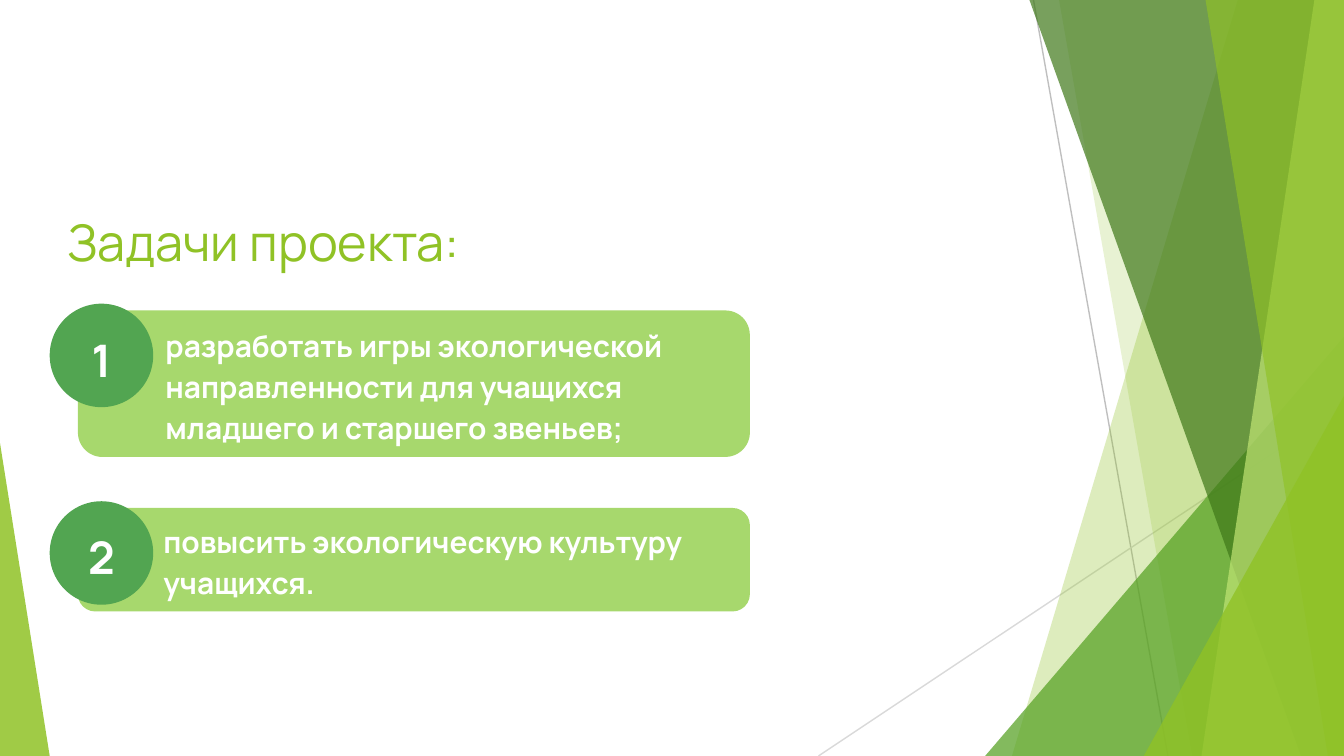
from lxml import etree
from pptx import Presentation
from pptx.dml.color import RGBColor
from pptx.enum.shapes import MSO_CONNECTOR, MSO_SHAPE
from pptx.enum.text import MSO_ANCHOR, MSO_AUTO_SIZE, PP_ALIGN
from pptx.oxml.ns import qn
from pptx.util import Inches, Pt

WIDTH = 10
HEIGHT = WIDTH * 9 / 16
FONT = "Manrope"
WHITE = RGBColor(0xFF, 0xFF, 0xFF)
LIME = RGBColor(0x90, 0xC2, 0x26)
PALE_LIME = RGBColor(0xC0, 0xE4, 0x74)
GREEN = RGBColor(0x54, 0xA0, 0x21)
DARK_GREEN = RGBColor(0x3F, 0x78, 0x19)
CARD_GREEN = RGBColor(0xA7, 0xD8, 0x6D)
BADGE_GREEN = RGBColor(0x52, 0xA5, 0x51)
GRAY = RGBColor(0xBF, 0xBF, 0xBF)
LIGHT_GRAY = RGBColor(0xD9, 0xD9, 0xD9)

TASKS = [
    ("разработать игры экологической направленности для учащихся "
     "младшего и старшего звеньев;", 2.26, 1.09),
    ("повысить экологическую культуру учащихся.", 3.73, 0.77),
]


def paint(shape, color, opacity=100):
    """Give a shape a plain fill with no outline or shadow."""
    shape.shadow.inherit = False
    shape.line.fill.background()
    shape.fill.solid()
    shape.fill.fore_color.rgb = color
    if opacity < 100:
        tint = shape.fill._xPr.find(".//" + qn("a:srgbClr"))
        etree.SubElement(tint, qn("a:alpha"), val=str(opacity * 1000))


def write(shape, text, size, color=WHITE, bold=False, align=PP_ALIGN.LEFT,
          anchor=MSO_ANCHOR.MIDDLE, inset=0.1, indent=0, spacing=None):
    """Write one formatted paragraph into a shape."""
    frame = shape.text_frame
    frame.word_wrap = True
    frame.auto_size = MSO_AUTO_SIZE.NONE
    frame.vertical_anchor = anchor
    frame.margin_left = frame.margin_right = Inches(inset)
    frame.margin_top = frame.margin_bottom = Inches(inset)
    paragraph = frame.paragraphs[0]
    paragraph.alignment = align
    paragraph.line_spacing = spacing
    properties = paragraph._p.get_or_add_pPr()
    properties.set("marL", str(Inches(indent)))
    properties.set("indent", "0")
    run = paragraph.add_run()
    run.text = text
    run.font.name = FONT
    run.font.size = Pt(size)
    run.font.bold = bold
    run.font.color.rgb = color


def add_block(slide, kind, left, top, width, height, color, opacity=100, adjust=None):
    """Add a painted preset shape."""
    block = slide.shapes.add_shape(
        kind, Inches(left), Inches(top), Inches(width), Inches(height))
    if adjust is not None:
        block.adjustments[0] = adjust
    paint(block, color, opacity)
    return block


def add_ray(slide, start, end, color):
    """Add a thin straight line between two points."""
    ray = slide.shapes.add_connector(
        MSO_CONNECTOR.STRAIGHT, *(Inches(value) for value in (*start, *end)))
    ray.line.color.rgb = color
    ray.line.width = Pt(0.75)
    etree.SubElement(ray._element.spPr, qn("a:effectLst"))


def add_band(slide, top_x, bottom_x, color, opacity):
    """Add a full-height band from a slanted edge to the right slide edge."""
    corners = [(Inches(x), Inches(y)) for x, y in (
        (top_x, 0), (WIDTH, 0), (WIDTH, HEIGHT), (bottom_x, HEIGHT))]
    builder = slide.shapes.build_freeform(*corners[0])
    builder.add_line_segments(corners[1:], close=True)
    paint(builder.convert_to_shape(), color, opacity)


def add_corner(slide, left, width, height, color, opacity, apex):
    """Add a right triangle standing on the bottom slide edge."""
    add_block(slide, MSO_SHAPE.ISOSCELES_TRIANGLE, left, HEIGHT - height,
              width, height, color, opacity, apex)


def add_facets(slide):
    """Draw the translucent green facets on both slide edges."""
    add_ray(slide, (7.69, 0), (8.69, HEIGHT), GRAY)
    add_ray(slide, (WIDTH, 3.02), (6.09, HEIGHT), LIGHT_GRAY)
    add_band(slide, 9.21, 7.53, LIME, 30)
    add_band(slide, 7.88, 8.87, LIME, 20)
    add_corner(slide, 7.33, 2.67, 3.12, GREEN, 72, apex=1)
    add_band(slide, 7.66, 9.68, DARK_GREEN, 70)
    add_band(slide, 9.78, 8.94, PALE_LIME, 70)
    add_band(slide, 8.97, 9.88, LIME, 65)
    add_corner(slide, 8.51, 1.49, 2.68, LIME, 80, apex=1)
    add_corner(slide, 0, 0.37, 2.33, LIME, 85, apex=0)


def add_heading(slide, text, left, top, width, height):
    """Place the slide title."""
    heading = slide.shapes.title
    heading.left, heading.top = Inches(left), Inches(top)
    heading.width, heading.height = Inches(width), Inches(height)
    write(heading, text, 27, LIME, anchor=MSO_ANCHOR.BOTTOM, inset=0)


def add_task(slide, number, text, left, top, height):
    """Place a task card with its number badge at the upper left."""
    card = add_block(slide, MSO_SHAPE.ROUNDED_RECTANGLE, left + 0.21, top + 0.05,
                     5, height, CARD_GREEN, adjust=0.167)
    write(card, text, 16, bold=True, indent=0.5, spacing=1.15)
    badge = add_block(slide, MSO_SHAPE.OVAL, left, top, 0.77, 0.77, BADGE_GREEN)
    write(badge, str(number), 24, bold=True, align=PP_ALIGN.CENTER, spacing=1.15)


def main():
    """Build and save the slide."""
    deck = Presentation()
    deck.slide_width, deck.slide_height = Inches(WIDTH), Inches(HEIGHT)
    slide = deck.slides.add_slide(deck.slide_layouts[5])
    add_facets(slide)
    add_heading(slide, "Задачи проекта:", 0.5, 1.08, 6.89, 0.94)
    for number, (text, top, height) in enumerate(TASKS, start=1):
        add_task(slide, number, text, 0.37, top, height)
    deck.save("out.pptx")


if __name__ == "__main__":
    main()
